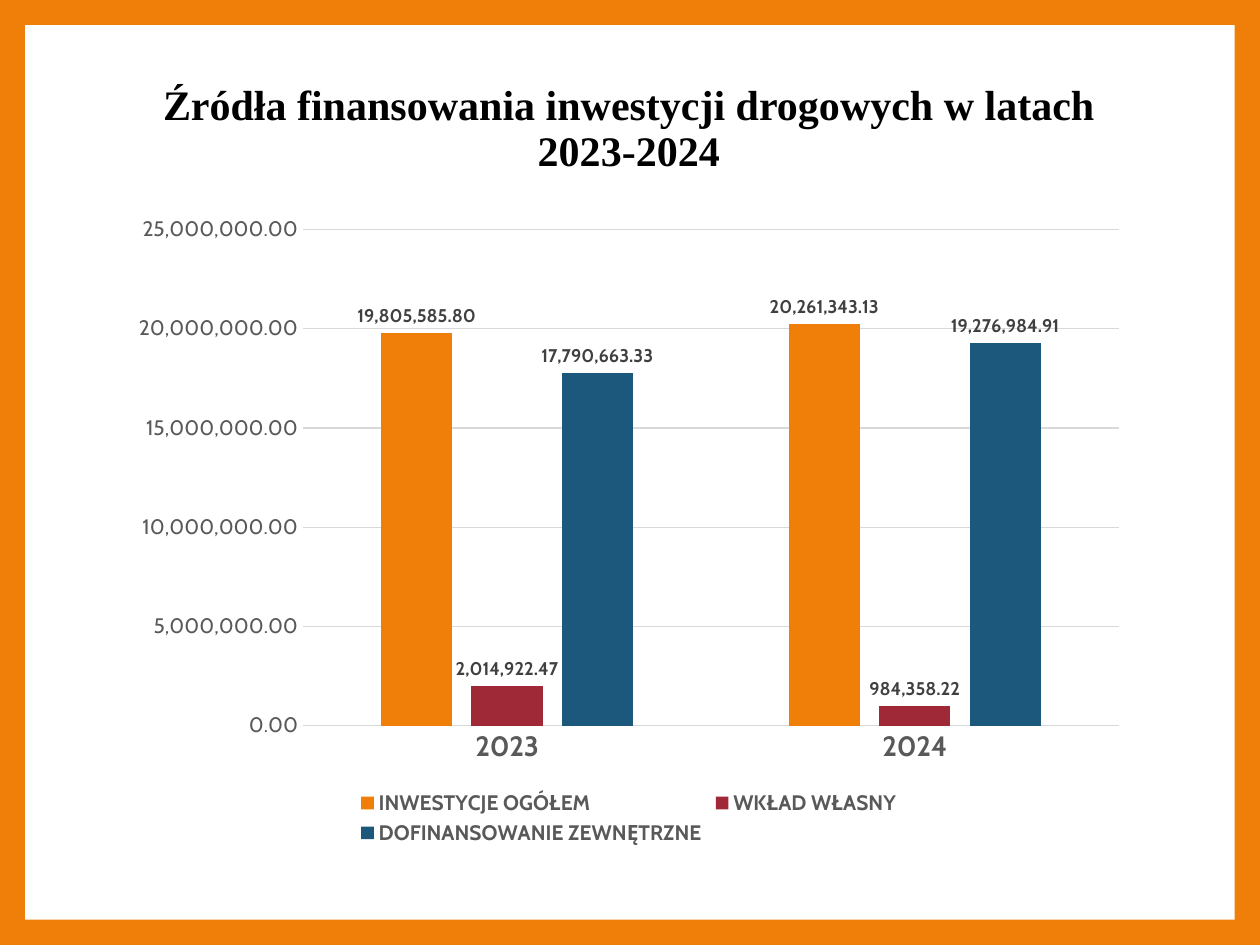
from pptx import Presentation
from pptx.chart.data import CategoryChartData
from pptx.dml.color import RGBColor
from pptx.enum.chart import XL_CHART_TYPE as ChartType
from pptx.enum.chart import XL_LABEL_POSITION as LabelPosition
from pptx.enum.chart import XL_LEGEND_POSITION as LegendPosition
from pptx.enum.chart import XL_TICK_MARK as TickMark
from pptx.enum.shapes import MSO_SHAPE as Shape
from pptx.enum.text import MSO_ANCHOR as Anchor
from pptx.enum.text import PP_ALIGN as Align
from pptx.util import Pt

ORANGE = RGBColor(0xF0, 0x7F, 0x09)
RED = RGBColor(0x9F, 0x29, 0x36)
BLUE = RGBColor(0x1B, 0x58, 0x7C)
WHITE = RGBColor(0xFF, 0xFF, 0xFF)
BLACK = RGBColor(0x00, 0x00, 0x00)
DARK = RGBColor(0x40, 0x40, 0x40)
GRAY = RGBColor(0x59, 0x59, 0x59)
LIGHT = RGBColor(0xD9, 0xD9, 0xD9)

TITLE = "Źródła finansowania inwestycji drogowych w latach 2023-2024"
YEARS = ("2023", "2024")
SERIES = (
    ("INWESTYCJE OGÓŁEM", (19805585.80, 20261343.13), ORANGE),
    ("WKŁAD WŁASNY", (2014922.47, 984358.22), RED),
    ("DOFINANSOWANIE ZEWNĘTRZNE", (17790663.33, 19276984.91), BLUE),
)
NUMBER_FORMAT = "#,##0.00"

WIDTH, HEIGHT = 720, 540
BORDER = 14.4
LEFT, CONTENT_WIDTH = 67.68, 583.2
TITLE_TOP, TITLE_HEIGHT = 48.24, 51.84
CHART_TOP, CHART_HEIGHT = 116.64, 369.36
LABEL_SIZE = 10.5


def set_font(font, size, color, bold=False, name="Cabin"):
    font.name = name
    font.size = Pt(size)
    font.bold = bold
    font.color.rgb = color


def add_panel(page):
    panel = page.shapes.add_shape(
        Shape.RECTANGLE, Pt(BORDER), Pt(BORDER),
        Pt(WIDTH - 2 * BORDER), Pt(HEIGHT - 2 * BORDER))
    panel.shadow.inherit = False
    panel.fill.solid()
    panel.fill.fore_color.rgb = WHITE
    panel.line.fill.background()


def add_title(page):
    box = page.shapes.add_textbox(
        Pt(LEFT), Pt(TITLE_TOP), Pt(CONTENT_WIDTH), Pt(TITLE_HEIGHT))
    frame = box.text_frame
    frame.word_wrap = True
    frame.vertical_anchor = Anchor.MIDDLE
    para = frame.paragraphs[0]
    para.text = TITLE
    para.alignment = Align.CENTER
    para.line_spacing = 0.9
    set_font(para.font, 24, BLACK, True, "Times New Roman")


def style_axes(chart):
    years, amounts = chart.category_axis, chart.value_axis
    for axis in (years, amounts):
        axis.major_tick_mark = axis.minor_tick_mark = TickMark.NONE
    set_font(years.tick_labels.font, 16, GRAY, True)
    set_font(amounts.tick_labels.font, 12, GRAY)
    amounts.minimum_scale = 0
    amounts.maximum_scale = 25000000
    amounts.major_unit = 5000000
    amounts.tick_labels.number_format = NUMBER_FORMAT
    amounts.tick_labels.number_format_is_linked = False
    amounts.format.line.fill.background()
    for line in (years.format.line, amounts.major_gridlines.format.line):
        line.color.rgb = LIGHT
        line.width = Pt(0.75)


def style_series(series, color):
    series.invert_if_negative = False
    series.format.fill.solid()
    series.format.fill.fore_color.rgb = color
    labels = series.data_labels
    labels.show_value = True
    labels.position = LabelPosition.OUTSIDE_END
    labels.number_format = NUMBER_FORMAT
    labels.number_format_is_linked = False
    set_font(labels.font, LABEL_SIZE, DARK, True)


def add_bars(page):
    data = CategoryChartData(number_format=NUMBER_FORMAT)
    data.categories = YEARS
    for name, values, _ in SERIES:
        data.add_series(name, values)
    chart = page.shapes.add_chart(
        ChartType.COLUMN_CLUSTERED, Pt(LEFT), Pt(CHART_TOP),
        Pt(CONTENT_WIDTH), Pt(CHART_HEIGHT), data).chart
    set_font(chart.font, 10, BLACK)
    chart.has_title = False
    chart.has_legend = True
    chart.legend.position = LegendPosition.BOTTOM
    chart.legend.include_in_layout = False
    set_font(chart.legend.font, 12, GRAY, True)
    style_axes(chart)
    plot = chart.plots[0]
    plot.vary_by_categories = False
    plot.gap_width = 219
    plot.overlap = -27
    for series, (_, _, color) in zip(plot.series, SERIES):
        style_series(series, color)


def main():
    deck = Presentation()
    deck.slide_width, deck.slide_height = Pt(WIDTH), Pt(HEIGHT)
    page = deck.slides.add_slide(deck.slide_layouts[6])
    page.background.fill.solid()
    page.background.fill.fore_color.rgb = ORANGE
    add_panel(page)
    add_title(page)
    add_bars(page)
    deck.save("out.pptx")


if __name__ == "__main__":
    main()
